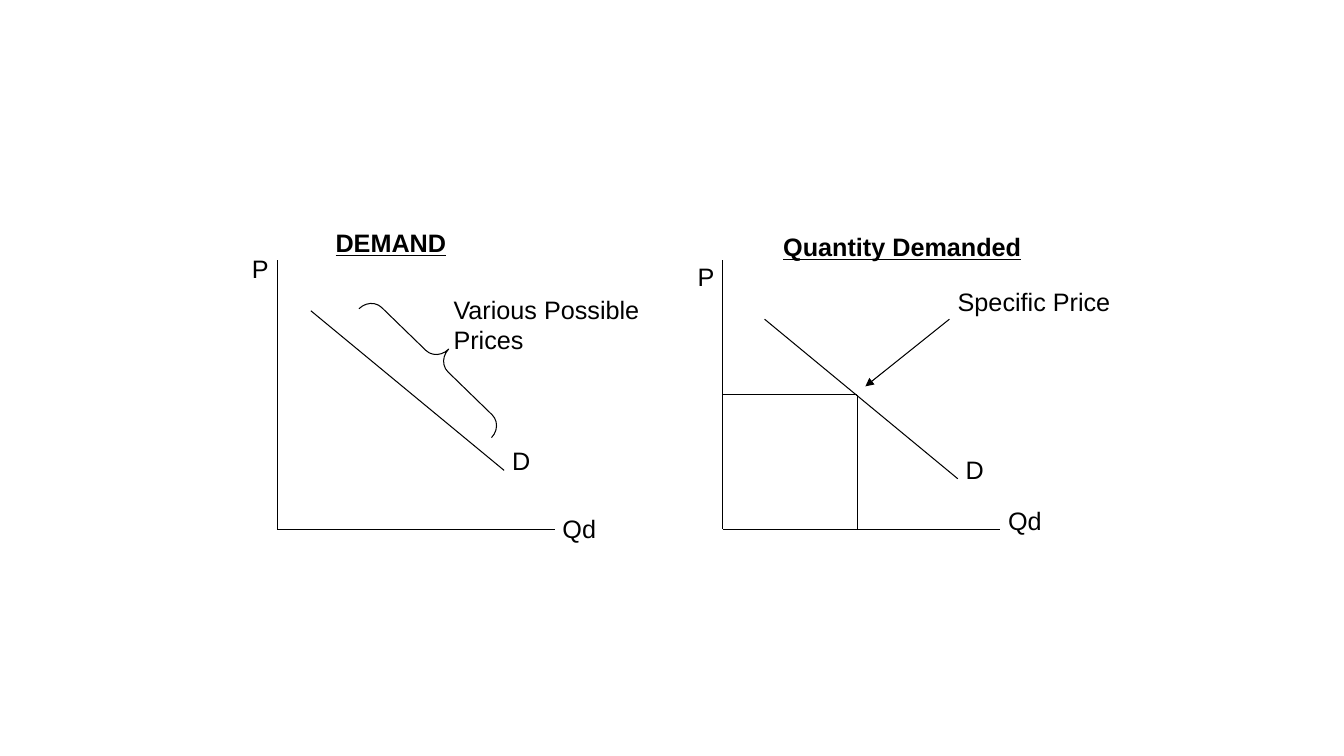
from lxml import etree
from pptx import Presentation, util as u
from pptx.dml.color import RGBColor
from pptx.enum import shapes, text
from pptx.oxml.ns import qn

# Lines are measured on a grid of twelfths of an inch
CELL = 1 / 12
INK = "000000"
AXIS_TOP, AXIS_BOTTOM, AXIS_WIDTH = 31, 63, 33

# Each graph: left edge, then the demand line's start and end
GRAPHS = [
    (33, (37, 37), (60, 56)),
    (86, (91, 38), (114, 57)),
]
PRICE_POINT = (102, 47)
PRICE_ARROW = ((113, 38), (103, 46))
BRACE = (50, 32, 4, 22)

# Text, left, top, width, height in inches
LABELS = [
    ("Various Possible\nPrices", 4.4, 2.87, 2.06, 0.7),
    ("Qd", 5.48, 5.04, 0.55, 0.4),
    ("P", 2.4, 2.46, 0.37, 0.4),
    ("Specific Price", 9.4, 2.79, 1.72, 0.4),
    ("D", 4.98, 4.37, 0.38, 0.4),
    ("D", 9.48, 4.46, 0.38, 0.4),
    ("Qd", 9.9, 4.96, 0.55, 0.4),
    ("P", 6.82, 2.54, 0.37, 0.4),
]
TITLES = [
    ("DEMAND", 3.23, 2.21, 1.3, 0.4),
    ("Quantity Demanded", 7.67, 2.25, 2.56, 0.4),
]


def color(value):
    return RGBColor.from_string(value)


def grid(*cells):
    return [u.Inches(c * CELL) for c in cells]


def ink(line):
    line.color.rgb = color(INK)
    line.width = u.Pt(0.75)


def add_line(s, start, end, arrow=False):
    c = s.shapes.add_connector(shapes.MSO_CONNECTOR.STRAIGHT, *grid(*start, *end))
    ink(c.line)
    if arrow:
        etree.SubElement(c.line._get_or_add_ln(), qn("a:tailEnd"), type="triangle")
    etree.SubElement(c._element.spPr, qn("a:effectLst"))


def add_text(s, words, left, top, width, height, size=18, bold=None, underline=None):
    box = s.shapes.add_textbox(*map(u.Inches, (left, top, width, height)))
    tf = box.text_frame
    tf.word_wrap = False
    tf.auto_size = text.MSO_AUTO_SIZE.SHAPE_TO_FIT_TEXT
    tf.text = words
    for p in tf.paragraphs:
        f = p.runs[0].font
        f.name, f.size, f.bold, f.underline = "Arial", u.Pt(size), bold, underline
        f.color.rgb = color(INK)


def add_brace(s):
    sp = s.shapes.add_shape(shapes.MSO_SHAPE.LEFT_BRACE, *grid(*BRACE))
    sp.rotation = 134.2
    sp.adjustments[0] = 0.458
    sp.adjustments[1] = 0.5
    sp.shadow.inherit = False
    sp.fill.background()
    ink(sp.line)


def main():
    prs = Presentation()
    prs.slide_width, prs.slide_height = u.Inches(13.33), u.Inches(7.5)
    s = prs.slides.add_slide(prs.slide_layouts[6])

    for left, demand_start, demand_end in GRAPHS:
        origin = (left, AXIS_BOTTOM)
        add_line(s, (left, AXIS_TOP), origin)
        add_line(s, origin, (left + AXIS_WIDTH, AXIS_BOTTOM))
        add_line(s, demand_start, demand_end)

    x, y = PRICE_POINT
    add_line(s, PRICE_POINT, (x, AXIS_BOTTOM))
    add_line(s, PRICE_POINT, (GRAPHS[1][0], y))
    add_line(s, *PRICE_ARROW, arrow=True)
    add_brace(s)

    for label in LABELS:
        add_text(s, *label)
    for title in TITLES:
        add_text(s, *title, bold=True, underline=True)
    prs.save("out.pptx")


if __name__ == "__main__":
    main()
